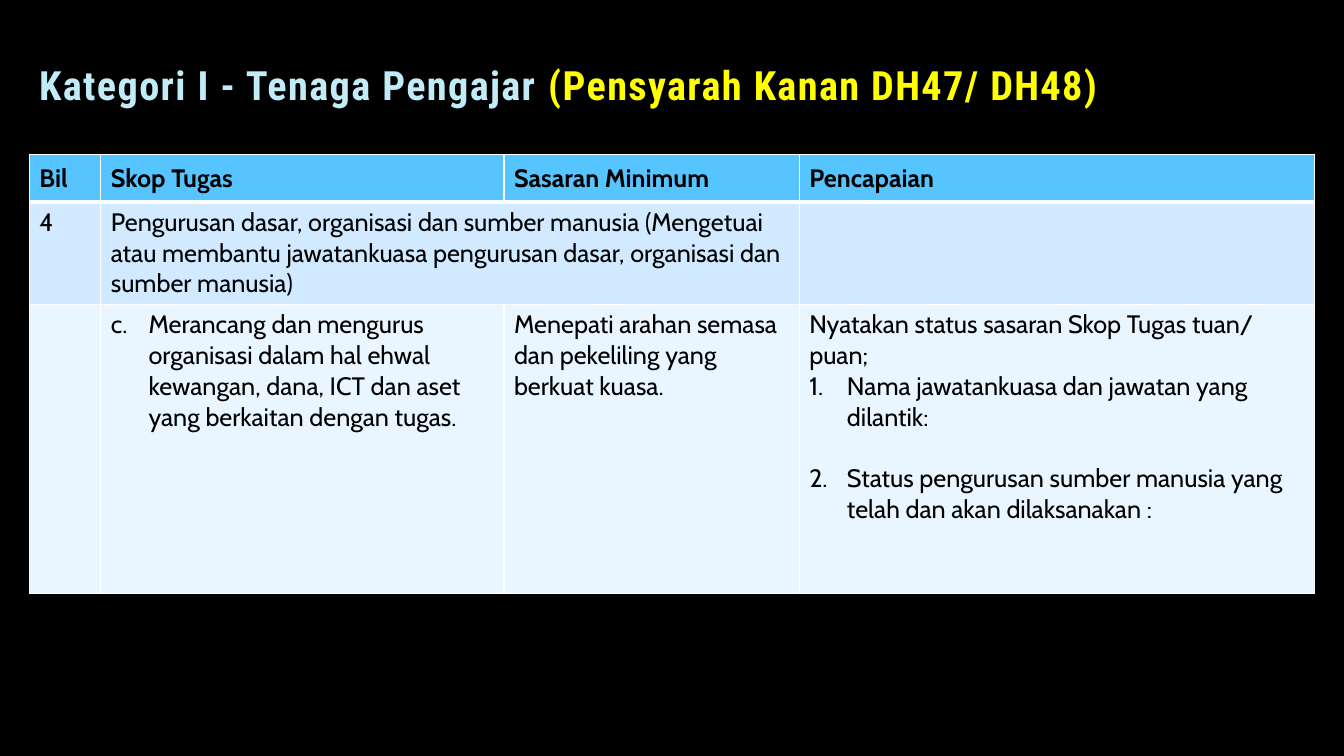
import lxml.etree
import pptx
import pptx.dml.color
import pptx.enum.text
import pptx.oxml.ns
import pptx.util
from pptx.util import Cm

COLORS = {
    "background": "000000", "text": "000000", "border": "FFFFFF",
    "title": "C1EBF7", "grade": "FFFF00",
    "header": "56C5FF", "scope": "D1EAFF", "detail": "E9F5FF",
}
ANCHOR = pptx.enum.text.MSO_ANCHOR


def rgb(name):
    return pptx.dml.color.RGBColor.from_string(COLORS[name])


def add_element(parent, tag, **attributes):
    e = lxml.etree.SubElement(parent, pptx.oxml.ns.qn(tag))
    for key, value in attributes.items():
        e.set(key, str(value))
    return e


def add_text(p, text, font="Cabin", size=18, color="text", bold=False, spacing=0):
    r = p.add_run()
    r.text = text
    r.font.name = font
    r.font.size = pptx.util.Pt(size)
    r.font.bold = bold
    r.font.color.rgb = rgb(color)
    if spacing:
        r.font._element.set("spc", str(int(spacing * 100)))


def number_paragraph(p, scheme, start):
    """Give the paragraph a hanging automatic number."""
    pPr = p._p.get_or_add_pPr()
    pPr.set("marL", str(Cm(0.95)))
    pPr.set("indent", str(-Cm(0.95)))
    add_element(pPr, "a:buFont", typeface="+mj-lt")
    add_element(pPr, "a:buAutoNum", type=scheme, startAt=start)


class SlideBuilder:
    """Holds the slide and the style of its elements."""

    def __init__(self, prs):
        self.s = prs.slides.add_slide(prs.slide_layouts[6])
        fill = self.s.background.fill
        fill.solid()
        fill.fore_color.rgb = rgb("background")

    def title(self, parts, left, top, width, height):
        sp = self.s.shapes.add_textbox(Cm(left), Cm(top), Cm(width), Cm(height))
        tf = sp.text_frame
        tf.word_wrap = True
        tf.vertical_anchor = ANCHOR.BOTTOM
        p = tf.paragraphs[0]
        p.line_spacing = 0.9
        for text, color in parts:
            add_text(p, text, font="Roboto Condensed", size=28.8,
                     color=color, bold=True, spacing=1)

    def table(self, rows, left, top, widths, heights):
        """Build a table from (fill, cells) rows; a cell is a list of paragraphs."""
        table = self.s.shapes.add_table(
            len(rows), len(widths), Cm(left), Cm(top),
            Cm(sum(widths)), Cm(sum(heights))).table
        table.horz_banding = False
        for column, width in zip(table.columns, widths):
            column.width = Cm(width)
        for i, (fill, cells) in enumerate(rows):
            table.rows[i].height = Cm(heights[i])
            for j, paragraphs in enumerate(cells):
                self.cell(table.cell(i, j), paragraphs, fill, i)
        return table

    def cell(self, cell, paragraphs, fill, row):
        is_header = row == 0
        tcPr = cell._tc.get_or_add_tcPr()
        for side in "LRTB":
            heavy = (side, row) in (("B", 0), ("T", 1))
            ln = add_element(tcPr, "a:ln" + side, w=pptx.util.Pt(3 if heavy else 1))
            solid = add_element(ln, "a:solidFill")
            add_element(solid, "a:srgbClr", val=COLORS["border"])
        cell.fill.solid()
        cell.fill.fore_color.rgb = rgb(fill)
        cell.vertical_anchor = ANCHOR.MIDDLE if is_header else ANCHOR.TOP
        tf = cell.text_frame
        for k, item in enumerate(paragraphs):
            p = tf.add_paragraph() if k else tf.paragraphs[0]
            text, scheme, start, gap = item if isinstance(item, tuple) else (item, None, 1, 0)
            if scheme:
                number_paragraph(p, scheme, start)
            if gap:
                p.space_before = pptx.util.Pt(gap)
            add_text(p, text, bold=is_header)


def main():
    prs = pptx.Presentation()
    prs.slide_width, prs.slide_height = Cm(33.87), Cm(19.05)
    builder = SlideBuilder(prs)

    headings = ["Bil", "Skop Tugas", "Sasaran Minimum", "Pencapaian"]
    rows = [
        ("header", [[heading] for heading in headings]),
        ("scope", [
            ["4"],
            ["Pengurusan dasar, organisasi dan sumber manusia (Mengetuai atau "
             "membantu jawatankuasa pengurusan dasar, organisasi dan sumber manusia)"],
            [],
            [],
        ]),
        ("detail", [
            [],
            [("Merancang dan mengurus organisasi dalam hal ehwal kewangan, dana, "
              "ICT dan aset yang berkaitan dengan tugas.", "alphaLcPeriod", 3, 0)],
            ["Menepati arahan semasa dan pekeliling yang berkuat kuasa."],
            ["Nyatakan status sasaran Skop Tugas tuan/ puan;",
             ("Nama jawatankuasa dan jawatan yang dilantik:", "arabicPeriod", 1, 0),
             ("Status pengurusan sumber manusia yang telah dan akan dilaksanakan :",
              "arabicPeriod", 2, 22)],
        ]),
    ]
    table = builder.table(rows, left=0.74, top=3.89,
                          widths=[1.8, 10.16, 7.44, 12.98], heights=[1.2, 2.57, 7.29])
    table.cell(1, 1).merge(table.cell(1, 2))

    builder.title([("Kategori I - Tenaga Pengajar ", "title"),
                   ("(Pensyarah Kanan DH47/ DH48)", "grade")],
                  left=0.74, top=1.19, width=28.88, height=1.7)
    prs.save("out.pptx")


if __name__ == "__main__":
    main()
